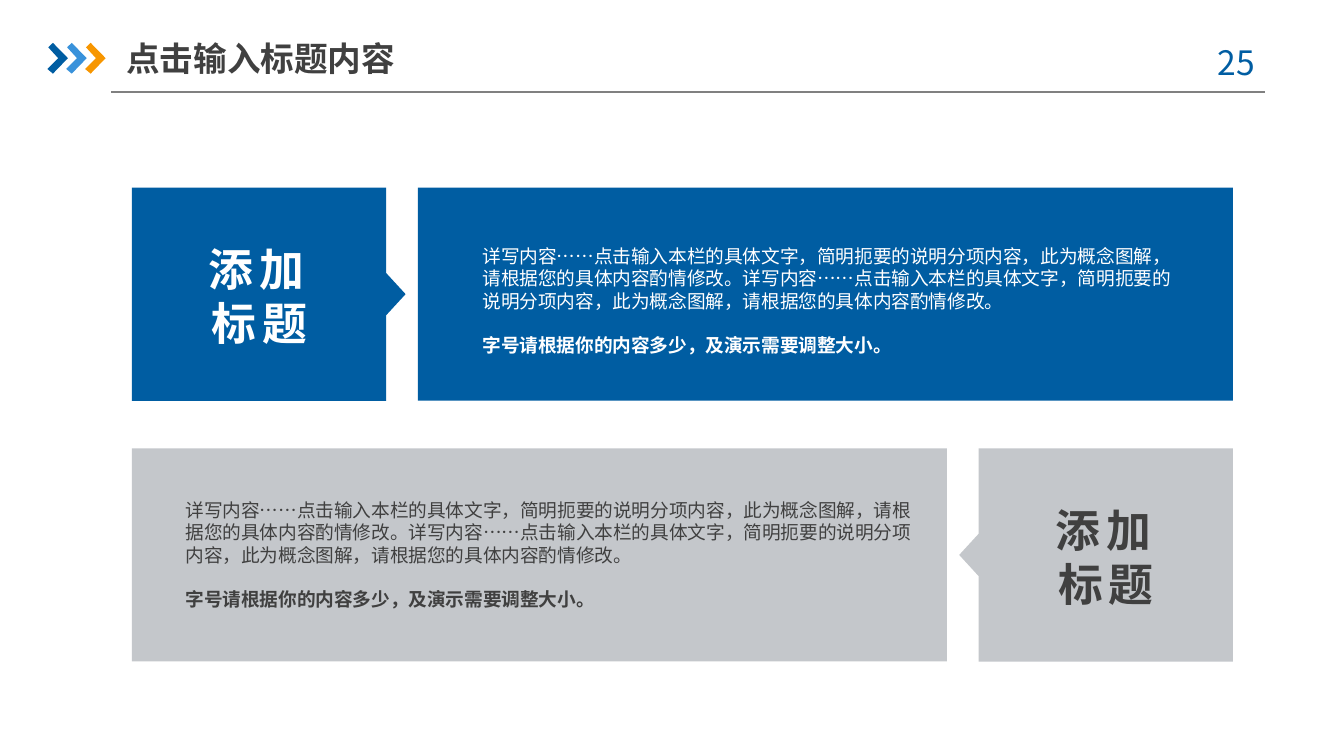
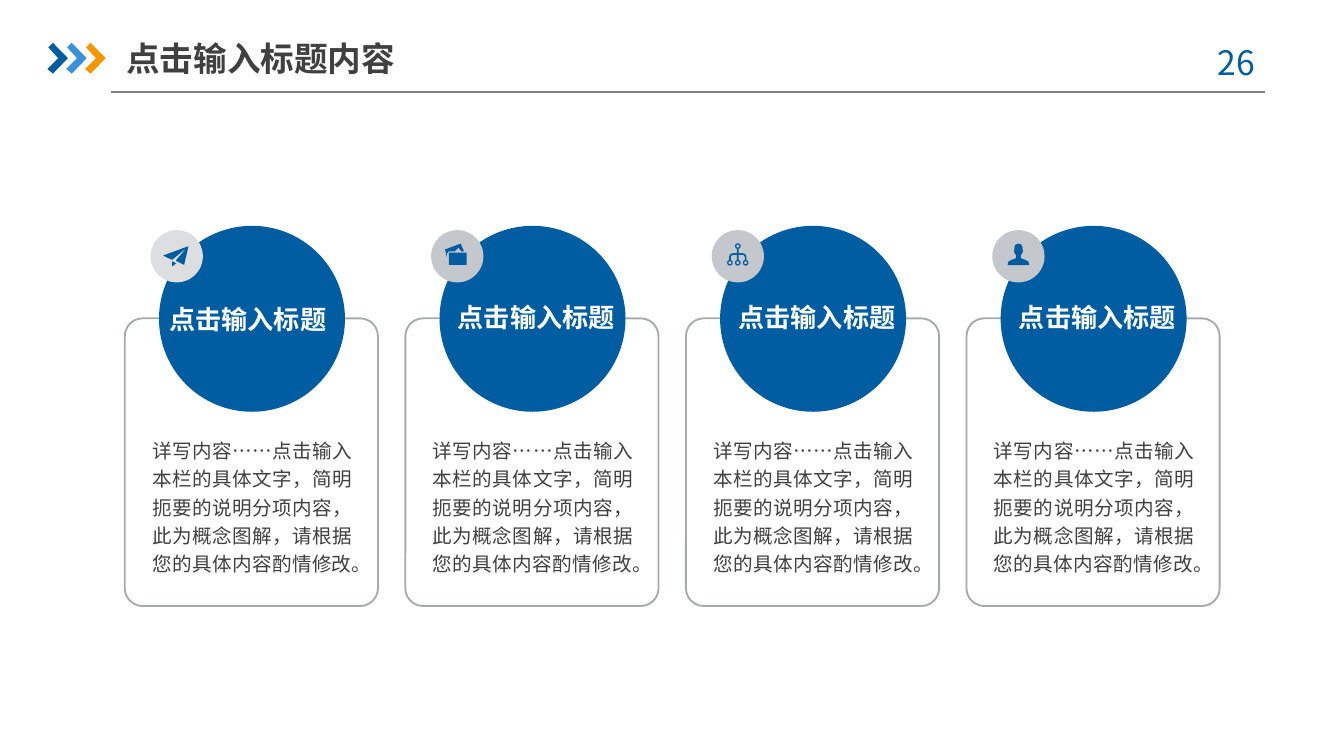
"""Build two content slides: paired title panels and four round-topped cards."""
from math import cos, pi, sin

from lxml import etree
from pptx import Presentation
from pptx.dml.color import RGBColor
from pptx.enum.shapes import MSO_CONNECTOR, MSO_SHAPE
from pptx.enum.text import MSO_ANCHOR, PP_ALIGN
from pptx.oxml.ns import qn
from pptx.util import Pt

RECT, OVAL = MSO_SHAPE.RECTANGLE, MSO_SHAPE.OVAL
ROUNDED = MSO_SHAPE.ROUNDED_RECTANGLE
STRAIGHT = MSO_CONNECTOR.STRAIGHT
LEFT, CENTER, JUSTIFY = PP_ALIGN.LEFT, PP_ALIGN.CENTER, PP_ALIGN.JUSTIFY
TOP, MIDDLE = MSO_ANCHOR.TOP, MSO_ANCHOR.MIDDLE

FONT = "Noto Sans CJK SC"
BLUE = RGBColor(0x00, 0x5D, 0xA2)
SKY = RGBColor(0x39, 0x92, 0xDB)
ORANGE = RGBColor(0xF7, 0x96, 0x00)
INK = RGBColor(0x40, 0x40, 0x40)
RULE_GRAY = RGBColor(0x80, 0x80, 0x80)
OUTLINE_GRAY = RGBColor(0xA6, 0xAA, 0xA9)
GRAY = RGBColor(0xC4, 0xC7, 0xCB)
PALE_GRAY = RGBColor(0xDC, 0xDE, 0xE0)
WHITE = RGBColor(0xFF, 0xFF, 0xFF)

HEADING = "点击输入标题内容"
DETAIL = ("详写内容……点击输入本栏的具体文字，简明扼要的说明分项内容，"
          "此为概念图解，请根据您的具体内容酌情修改。")
SIZE_HINT = "字号请根据你的内容多少，及演示需要调整大小。"
PANEL_TITLE = "添加标题"
CARD_TITLE = "点击输入标题"

CHEVRON = [(0.5, 2.4), (3, 0), (11, 8.2), (3, 16.5), (0, 14), (5.8, 8.2)]
CHEVRON_COLORS = [BLUE, SKY, ORANGE]
CHEVRON_PITCH = 10.1

ROW_LEFT, ROW_RIGHT, ROW_HEIGHT = 70.7, 660.5, 114.2
TAB_WIDTH, TAB_GAP, TIP_DEPTH, TIP_HALF = 136.2, 17, 10.4, 11.3
ROWS = [
    {"top": 100.5, "mirrored": False, "fill": BLUE, "ink": WHITE,
     "title": (104.4, 129.6), "detail": (258.5, 131, 374.4)},
    {"top": 240.2, "mirrored": True, "fill": GRAY, "ink": INK,
     "title": (558, 269.3), "detail": (99.4, 267.1, 391)},
]


def mirror(half):
    """Close a right-hand outline with its reflection."""
    return half + [(-x, y) for x, y in reversed(half)]


def ring(cx, cy):
    """Return the outer and inner outlines of a small ring."""
    turns = [2 * pi * step / 24 for step in range(24)]
    return [[(cx + r * cos(t), cy + r * sin(t)) for t in turns] for r in (1.5, 0.8)]


PLANE = [
    [(6.3, -5.4), (-7.3, -0.4), (-4.5, 1), (-2.4, 1.9), (5.4, -4.6),
     (-0.3, 2), (-0.3, 2.5), (4, 4.6)],
    [(-2.4, 2.7), (-2.4, 5.4), (-0.2, 3.8)],
]
PHOTOS = [
    [(3.6, -2.6), (1.8, -6.8), (-6.6, -3.6), (-5.6, 0.4), (-5.6, -1.4),
     (-4.6, -2.6), (-1.4, -2.6), (0.7, -4.6), (2.1, -2.6)],
    [(-4.5, -1.9), (5, -1.9), (5, 4.6), (-4.5, 4.6)],
]
BRANCHES = [mirror([(0.45, -3.9), (0.45, -1.6), (2.7, -1.6), (4.1, -1.1),
                    (4.65, 0.2), (4.65, 2), (3.75, 2), (3.75, 0.4),
                    (3.4, -0.4), (2.6, -0.7), (0.45, -0.7), (0.45, 2)])]
for node in [(0, -5.4), (-4.2, 3.5), (0, 3.5), (4.2, 3.5)]:
    BRANCHES += ring(*node)
PERSON = [mirror([(0, -6.8), (1.6, -6.2), (2.2, -4.6), (2.2, -3.2),
                  (2.5, -2.9), (2, -1.6), (1.2, -0.4), (1.4, 1.1),
                  (3.6, 1.9), (5.4, 2.9), (5.8, 4.7)])]

CARD_PITCH = 150.3
CARDS = [
    {"icon": PLANE, "badge": PALE_GRAY, "title": (86, 171), "spacing": 1},
    {"icon": PHOTOS, "badge": GRAY, "title": (90.3, 171), "spacing": 0.9},
    {"icon": BRANCHES, "badge": GRAY, "title": (90.3, 171), "spacing": 0.9},
    {"icon": PERSON, "badge": GRAY, "title": (90.3, 171), "spacing": 0.9},
]


def paint(shape, fill=None, outline=None):
    shape.shadow.inherit = False
    if fill is None:
        shape.fill.background()
    else:
        shape.fill.solid()
        shape.fill.fore_color.rgb = fill
    if outline is None:
        shape.line.fill.background()
    else:
        shape.line.color.rgb = outline
        shape.line.width = Pt(1)
    return shape


def add_preset(slide, preset, box, fill=None, outline=None):
    shape = slide.shapes.add_shape(preset, *map(Pt, box))
    return paint(shape, fill, outline)


def add_outline(slide, contours, fill, dx=0, dy=0):
    placed = [[(Pt(x + dx), Pt(y + dy)) for x, y in c] for c in contours]
    builder = slide.shapes.build_freeform(*placed[0][0])
    for index, contour in enumerate(placed):
        if index:
            builder.move_to(*contour[0])
        builder.add_line_segments(contour[1:], close=True)
    paint(builder.convert_to_shape(), fill)


def add_text(slide, box, paragraphs, size, color, anchor=TOP,
             line_spacing=None, gap=0, tracking=0):
    """Add a text box from (text, bold, alignment) paragraphs."""
    frame = slide.shapes.add_textbox(*map(Pt, box)).text_frame
    frame.word_wrap = True
    frame.vertical_anchor = anchor
    frame.margin_left = frame.margin_right = 0
    frame.margin_top = frame.margin_bottom = 0
    for index, (text, bold, alignment) in enumerate(paragraphs):
        paragraph = frame.add_paragraph() if index else frame.paragraphs[0]
        paragraph.alignment = alignment
        if line_spacing:
            paragraph.line_spacing = line_spacing
        if index:
            paragraph.space_before = Pt(gap)
        run = paragraph.add_run()
        run.text = text
        run.font.size = Pt(size)
        run.font.bold = bold
        run.font.color.rgb = color
        run.font.name = FONT
        properties = run._r.get_or_add_rPr()
        etree.SubElement(properties, qn("a:ea"), typeface=FONT)
        if tracking:
            properties.set("spc", str(tracking * 100))


def add_base_slide(deck, number):
    slide = deck.slides.add_slide(deck.slide_layouts[6])
    rule = slide.shapes.add_connector(STRAIGHT, Pt(59.6), Pt(49.3), Pt(677.6), Pt(49.3))
    rule.line.color.rgb = RULE_GRAY
    rule.line.width = Pt(0.75)
    etree.SubElement(rule._element.spPr, qn("a:effectLst"))
    for index, color in enumerate(CHEVRON_COLORS):
        add_outline(slide, [CHEVRON], color, 25.4 + index * CHEVRON_PITCH, 23)
    add_text(slide, (645, 22.3, 38.4, 21.6), [(f"{number} ", False, CENTER)], 18, BLUE)
    add_text(slide, (67.7, 15.8, 168, 30.2), [(HEADING, True, LEFT)], 18, INK, MIDDLE)
    return slide


def add_row(slide, row):
    top, bottom = row["top"], row["top"] + ROW_HEIGHT
    middle = (top + bottom) / 2
    edge = ROW_LEFT + TAB_WIDTH
    panel_left = edge + TAB_GAP
    panel_width = ROW_RIGHT - panel_left
    tab = [(ROW_LEFT, top), (edge, top), (edge, middle - TIP_HALF),
           (edge + TIP_DEPTH, middle), (edge, middle + TIP_HALF),
           (edge, bottom), (ROW_LEFT, bottom)]
    if row["mirrored"]:
        panel_left = ROW_LEFT
        tab = [(ROW_LEFT + ROW_RIGHT - x, y) for x, y in tab]
    add_preset(slide, RECT, (panel_left, top, panel_width, ROW_HEIGHT), row["fill"])
    add_outline(slide, [tab], row["fill"])
    add_text(slide, (*row["detail"], 60),
             [(DETAIL * 2, False, LEFT), (SIZE_HINT, True, JUSTIFY)],
             10, row["ink"], gap=12)
    add_text(slide, (*row["title"], 69.1, 58.3), [(PANEL_TITLE, True, CENTER)],
             24, row["ink"], tracking=3)


def add_card(slide, card, dx):
    frame = add_preset(slide, ROUNDED, (66.9 + dx, 170.6, 135.6, 154.1),
                       outline=OUTLINE_GRAY)
    frame.adjustments[0] = 0.07
    add_preset(slide, OVAL, (85.2 + dx, 121, 99.6, 99.6), BLUE)
    add_preset(slide, OVAL, (80.7 + dx, 123.3, 28, 28), card["badge"])
    add_outline(slide, card["icon"], BLUE, 94.7 + dx, 137.3)
    title_left, title_middle = card["title"]
    add_text(slide, (title_left + dx, title_middle - 17, 93.6, 34),
             [(CARD_TITLE, True, CENTER)], 14, WHITE, MIDDLE, card["spacing"])
    add_text(slide, (81.5 + dx, 237, 107.3, 67), [(DETAIL, False, JUSTIFY)],
             10.5, INK, MIDDLE, 1.2)


def main():
    deck = Presentation()
    deck.slide_width, deck.slide_height = Pt(720), Pt(405)
    panels = add_base_slide(deck, 25)
    for row in ROWS:
        add_row(panels, row)
    cards = add_base_slide(deck, 26)
    for index, card in enumerate(CARDS):
        add_card(cards, card, index * CARD_PITCH)
    deck.save("out.pptx")


if __name__ == "__main__":
    main()
